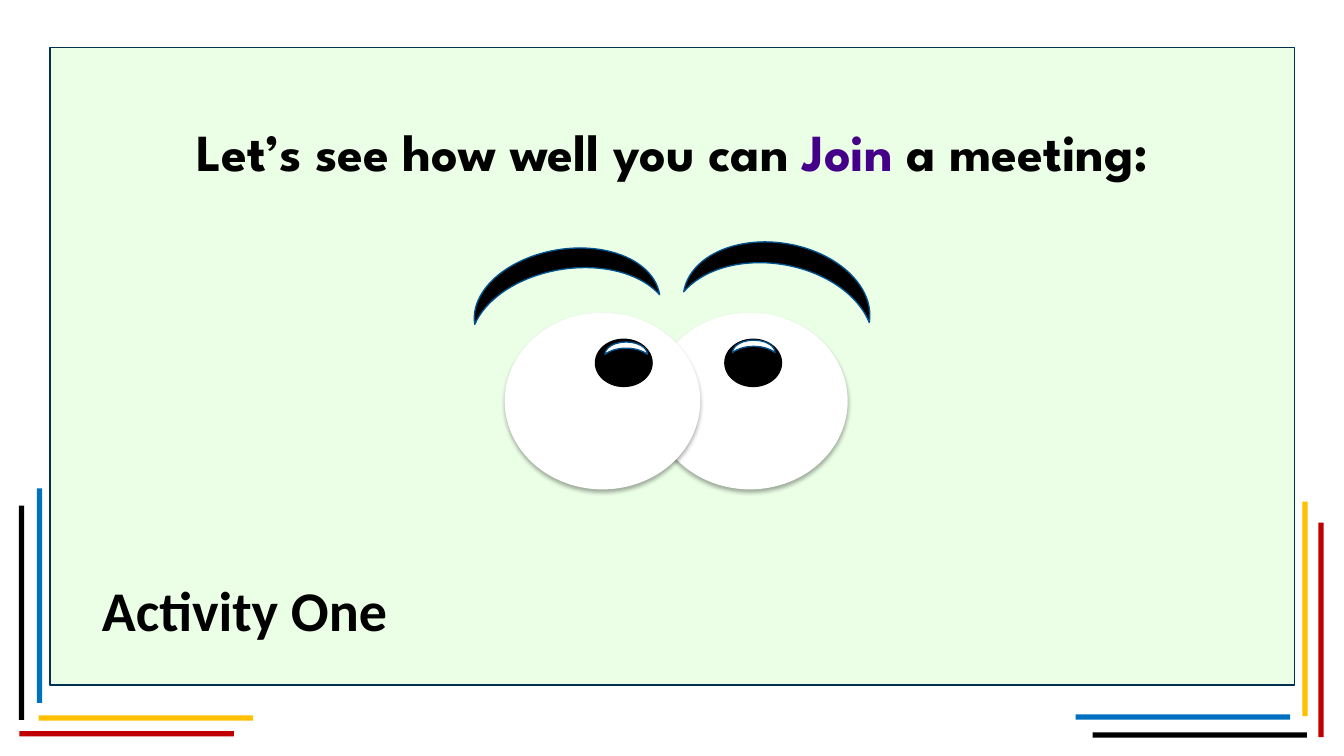
import pptx
import pptx.dml.color
import pptx.enum.shapes
import pptx.enum.text
import pptx.oxml
import pptx.util

Pt = pptx.util.Pt
RGBColor = pptx.dml.color.RGBColor
KIND = pptx.enum.shapes.MSO_SHAPE
ANCHOR = pptx.enum.text.MSO_ANCHOR
ALIGN = pptx.enum.text.PP_ALIGN
SIZING = pptx.enum.text.MSO_AUTO_SIZE

BLACK = RGBColor(0x00, 0x00, 0x00)
WHITE = RGBColor(0xFF, 0xFF, 0xFF)
RED = RGBColor(0xC0, 0x00, 0x00)
GOLD = RGBColor(0xFF, 0xC0, 0x00)
BLUE = RGBColor(0x00, 0x70, 0xC0)
NAVY = RGBColor(0x00, 0x31, 0x54)
EDGE = RGBColor(0x00, 0x53, 0x8E)
MINT = RGBColor(0xEB, 0xFE, 0xE6)
PURPLE = RGBColor(0x45, 0x00, 0x8A)

SPACE = 'xmlns:a="http://schemas.openxmlformats.org/drawingml/2006/main"'
SHADE = f"""<a:effectLst {SPACE}>
  <a:outerShdw blurRad="{Pt(3.5)}" dist="{Pt(2.2)}" dir="5400000" algn="t" rotWithShape="0">
    <a:srgbClr val="000000"><a:alpha val="32000"/></a:srgbClr>
  </a:outerShdw>
</a:effectLst>"""
RIM = f"""<a:ln {SPACE} w="{Pt(0.75)}">
  <a:solidFill><a:srgbClr val="FFFFFF"/></a:solidFill>
</a:ln>"""


class Deck:
    head = "League Spartan"
    body = "Calibri"
    bar_len = 163.4
    bar_wide = 4

    def __init__(self, slide):
        self.slide = slide

    def place(self, item, left, top, wide, high):
        item.left, item.top = Pt(left), Pt(top)
        item.width, item.height = Pt(wide), Pt(high)

    def shape(self, kind, box, fill, line=None, turn=0, shade=False):
        item = self.slide.shapes.add_shape(kind, *map(Pt, box))
        item.rotation = turn
        item.fill.solid()
        item.fill.fore_color.rgb = fill
        if line is None:
            item.line.fill.background()
        else:
            item.line.color.rgb = line
            item.line.width = Pt(1)
        if shade:
            item.element.spPr.append(pptx.oxml.parse_xml(SHADE))
        else:
            item.shadow.inherit = False
        return item

    def bar(self, left, top, fill, flat):
        size = (self.bar_len, self.bar_wide)
        self.shape(KIND.RECTANGLE, (left, top, *(size if flat else size[::-1])), fill)

    def run(self, para, text, face, size, color):
        run = para.add_run()
        run.text = text
        run.font.name, run.font.size, run.font.bold = face, Pt(size), True
        run.font.color.rgb = color
        return run

    def title(self, box, parts):
        item = self.slide.shapes.title
        self.place(item, *box)
        # Bring the title in front of the panel
        self.slide.shapes.element.append(item.element)
        frame = item.text_frame
        frame.word_wrap = True
        frame.auto_size = SIZING.NONE
        frame.vertical_anchor = ANCHOR.MIDDLE
        frame.margin_bottom = Pt(44)
        para = frame.paragraphs[0]
        para.alignment = ALIGN.CENTER
        for text, color in parts:
            self.run(para, text, self.head, 39.6, color)

    def label(self, box, text):
        frame = self.slide.shapes.add_textbox(*map(Pt, box)).text_frame
        frame.word_wrap = False
        frame.auto_size = SIZING.SHAPE_TO_FIT_TEXT
        run = self.run(frame.paragraphs[0], text, self.body, 42.7, BLACK)
        run.font.element.insert(0, pptx.oxml.parse_xml(RIM)) if hasattr(
            run.font, "element") else run._r.get_or_add_rPr().insert(
            0, pptx.oxml.parse_xml(RIM))


def main():
    show = pptx.Presentation()
    show.slide_width, show.slide_height = Pt(1023.84), Pt(576)
    deck = Deck(show.slides.add_slide(show.slide_layouts[5]))

    # Corner bars: left, top, colour, flat
    for bar in (
        (14.4, 385.2, BLACK, False), (14.8, 557, RED, True),
        (29.5, 545, GOLD, True), (28.1, 372.2, BLUE, False),
        (832.3, 558, BLACK, True), (1004.4, 398.2, RED, False),
        (992.2, 382.3, GOLD, False), (819.4, 544.3, BLUE, True),
    ):
        deck.bar(*bar)

    # Panel and title
    deck.shape(KIND.RECTANGLE, (38.2, 36, 948.2, 486), MINT, NAVY)
    deck.title((63.4, 79.2, 897.8, 111.6), (
        ("Let’s see how well you can ", BLACK),
        ("Join", PURPLE),
        (" a meeting:", BLACK),
    ))

    # Eyes, pupils and glints
    for left in (496.8, 384.5):
        deck.shape(KIND.OVAL, (left, 238.3, 149, 134.6), WHITE, shade=True)
    for left in (453.6, 552.2):
        deck.shape(KIND.OVAL, (left, 258.5, 43.2, 36), BLACK, BLACK)
    for left, top in ((569.5, 247.7), (472.3, 249.1)):
        deck.shape(KIND.MOON, (left, top, 9.4, 32.4), WHITE, EDGE, 90)

    # Brows
    for box, turn in (
        ((405.4, 141.8, 46.1, 142.6), 80.9),
        ((571, 138.2, 49, 143.3), 99.4),
    ):
        brow = deck.shape(KIND.MOON, box, BLACK, EDGE, turn)
        brow.adjustments[0] = 0.33

    # Caption
    deck.label((70.6, 434.9, 234, 59), "Activity One")

    show.save("out.pptx")


if __name__ == "__main__":
    main()
